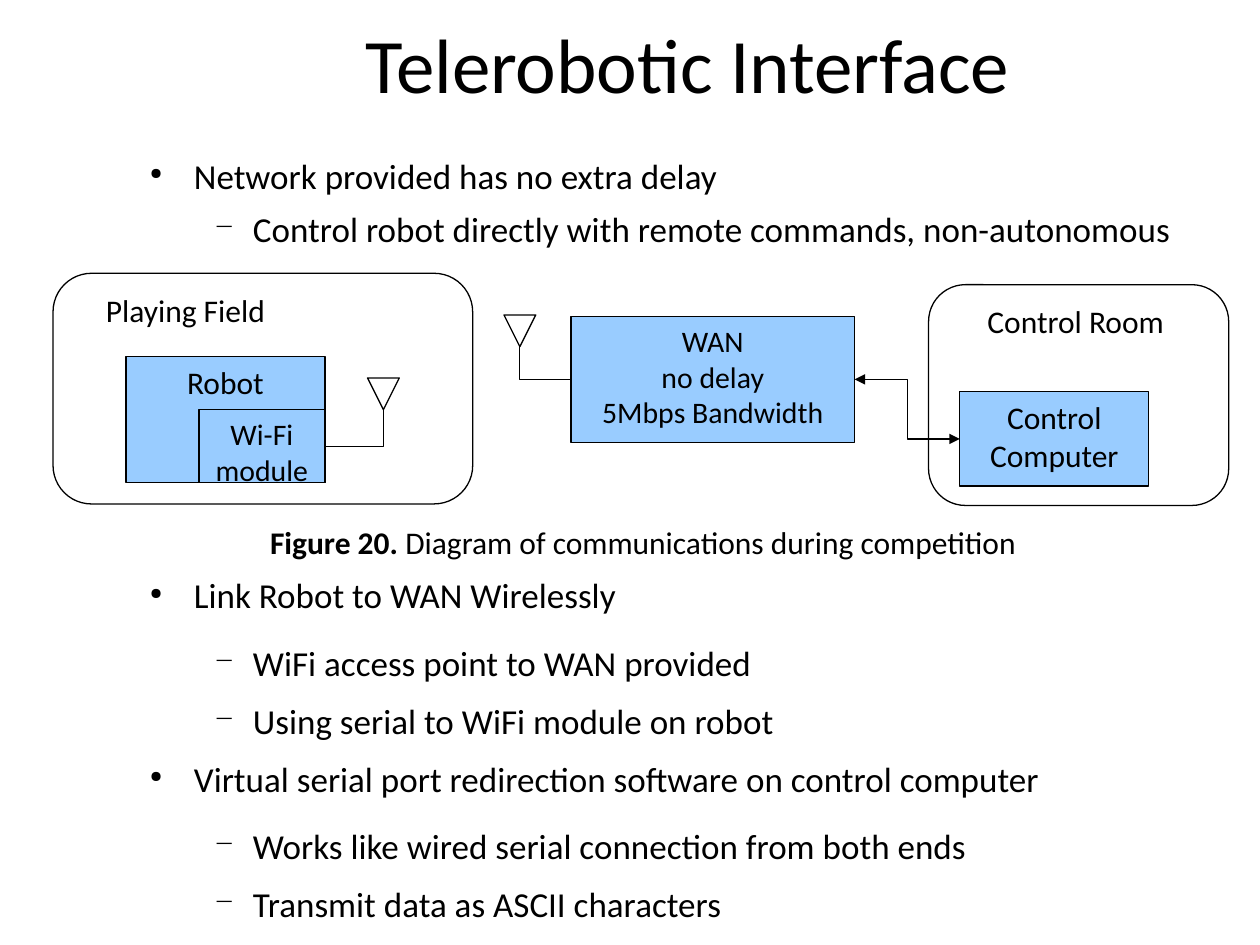
from lxml import etree
from pptx import Presentation
from pptx import util as u
from pptx.dml.color import RGBColor
from pptx.enum import shapes, text
from pptx.oxml.ns import qn

FONT, BLACK, WHITE, BLUE = "Calibri", "000000", "FFFFFF", "99CCFF"
TITLE = ("Telerobotic Interface", (3.6, -0.64, 20.53, 3.81))
CAPTION = ([("Figure 20. ", True), ("Diagram of communications during competition", False)],
           (4.29, 10.41, 17.35, 1.02))
LISTS = [
    ((1.27, 2.97, 22.86, 3.38), "before", (7, 6), [
        (1, "Network provided has no extra delay"),
        (2, "Control robot directly with remote commands, non-autonomous"),
    ]),
    ((1.27, 11.43, 22.86, 6.35), "after", (14.2, 8.5), [
        (1, "Link Robot to WAN Wirelessly"),
        (2, "WiFi access point to WAN provided"),
        (2, "Using serial to WiFi module on robot"),
        (1, "Virtual serial port redirection software on control computer"),
        (2, "Works like wired serial connection from both ends"),
        (2, "Transmit data as ASCII characters"),
    ]),
]
BULLETS = {1: ("●", 45, 2.39, -0.89), 2: ("−", 75, 3.58, -0.79)}
AREAS = [
    ("Control Room", (18.72, 5.74, 6.05, 4.45), 0.97),
    ("Playing Field", (1.07, 5.51, 8.46, 4.65), 0.84),
]
BLOCKS = {
    "wan": (["WAN", "no delay", "5Mbps Bandwidth"], (11.51, 6.38, 5.72, 2.54), 17),
    "robot": (["Robot"], (2.54, 7.19, 4.01, 2.54), 18),
    "computer": (["Control", "Computer"], (19.35, 7.9, 3.81, 1.9), 18),
    "module": (["Wi-Fi", "module"], (4.01, 8.26, 2.54, 1.47), 17),
}
ANTENNAS = [((10.16, 6.35, 0.64, 0.64), "wan", 0), ((7.41, 7.62, 0.64, 0.64), "module", 1)]


def color(target, value):
    """Give a font or line colour object a hex colour."""
    target.rgb = RGBColor.from_string(value)


def write(para, content, size=18, bold=False, align=None):
    """Add one formatted span of text to a paragraph."""
    if align is not None:
        para.alignment = align
    span = para.add_run()
    span.text = content
    span.font.name, span.font.size, span.font.bold = FONT, u.Pt(size), bold
    color(span.font.color, BLACK)


def paragraphs(frame, count):
    """Return the given number of paragraphs of a text frame."""
    return [frame.paragraphs[0]] + [frame.add_paragraph() for _ in range(count - 1)]


def add_text_box(slide, place):
    """Add a wrapping text box and return its frame."""
    frame = slide.shapes.add_textbox(*map(u.Cm, place)).text_frame
    frame.word_wrap = True
    return frame


def add_box(slide, kind, place, fill):
    """Add an outlined shape whose text starts at the top."""
    box = slide.shapes.add_shape(kind, *map(u.Cm, place))
    box.shadow.inherit = False
    box.fill.solid()
    color(box.fill.fore_color, fill)
    color(box.line.color, BLACK)
    box.line.width = u.Pt(0.75)
    box.text_frame.word_wrap = True
    box.text_frame.vertical_anchor = text.MSO_ANCHOR.TOP
    return box


def add_elbow(slide, start, end, bend=None, arrows=False):
    """Add a bent connector, with an optional bend position and arrowheads."""
    link = slide.shapes.add_connector(shapes.MSO_CONNECTOR.ELBOW, *start, *end)
    color(link.line.color, BLACK)
    link.line.width = u.Pt(0.75)
    properties = link._element.spPr
    etree.SubElement(properties, qn("a:effectLst"))
    if bend is not None:
        guides = properties.find(qn("a:prstGeom")).find(qn("a:avLst"))
        etree.SubElement(guides, qn("a:gd"), name="adj1", fmla=f"val {bend}")
    if arrows:
        for tag in ("a:headEnd", "a:tailEnd"):
            etree.SubElement(properties.find(qn("a:ln")), qn(tag), type="triangle")
    return link


def add_list(slide, place, side, gaps, items):
    """Add a two-level bulleted list."""
    frame = add_text_box(slide, place)
    for index, (para, (level, content)) in enumerate(zip(paragraphs(frame, len(items)), items)):
        mark, percent, margin, indent = BULLETS[level]
        para.level = level
        para.line_spacing = 1.02
        para.space_before = para.space_after = u.Pt(0)
        if side == "after":
            para.space_after = u.Pt(gaps[level - 1])
        elif index:
            para.space_before = u.Pt(gaps[level - 1])
        properties = para._p.get_or_add_pPr()
        properties.set("marL", str(u.Cm(margin)))
        properties.set("indent", str(u.Cm(indent)))
        etree.SubElement(properties, qn("a:buSzPct"), val=str(percent * 1000))
        etree.SubElement(properties, qn("a:buChar"), char=mark)
        write(para, content, size=20)


def main():
    """Build the slide and save it."""
    deck = Presentation()
    deck.slide_width, deck.slide_height = u.Cm(25.4), u.Cm(19.05)
    slide = deck.slides.add_slide(deck.slide_layouts[5])
    center = text.PP_ALIGN.CENTER

    title = slide.shapes.title
    title.left, title.top, title.width, title.height = map(u.Cm, TITLE[1])
    title.text_frame.auto_size = text.MSO_AUTO_SIZE.NONE
    title.text_frame.vertical_anchor = text.MSO_ANCHOR.MIDDLE
    write(title.text_frame.paragraphs[0], TITLE[0], size=44, align=center)

    for entry in LISTS:
        add_list(slide, *entry)

    for label, place, inset in AREAS:
        frame = add_box(slide, shapes.MSO_SHAPE.ROUNDED_RECTANGLE, place, WHITE).text_frame
        frame.margin_left = u.Cm(inset)
        write(frame.paragraphs[0], label, align=text.PP_ALIGN.LEFT)

    blocks = {}
    for name, (lines, place, size) in BLOCKS.items():
        blocks[name] = add_box(slide, shapes.MSO_SHAPE.FLOWCHART_PROCESS, place, BLUE)
        for para, line in zip(paragraphs(blocks[name].text_frame, len(lines)), lines):
            write(para, line, size=size, align=center)

    link = add_elbow(slide, (0, 0), (0, 0), arrows=True)
    link.begin_connect(blocks["computer"], 1)
    link.end_connect(blocks["wan"], 3)

    for place, name, side in ANTENNAS:
        antenna = add_box(slide, shapes.MSO_SHAPE.FLOWCHART_MERGE, place, WHITE)
        block = blocks[name]
        start = (antenna.left + antenna.width // 2, antenna.top + antenna.height)
        end = (block.left + side * block.width, block.top + block.height // 2)
        add_elbow(slide, start, end, bend=0)

    caption = add_text_box(slide, CAPTION[1]).paragraphs[0]
    for content, bold in CAPTION[0]:
        write(caption, content, bold=bold, align=center)

    deck.save("out.pptx")


if __name__ == "__main__":
    main()
